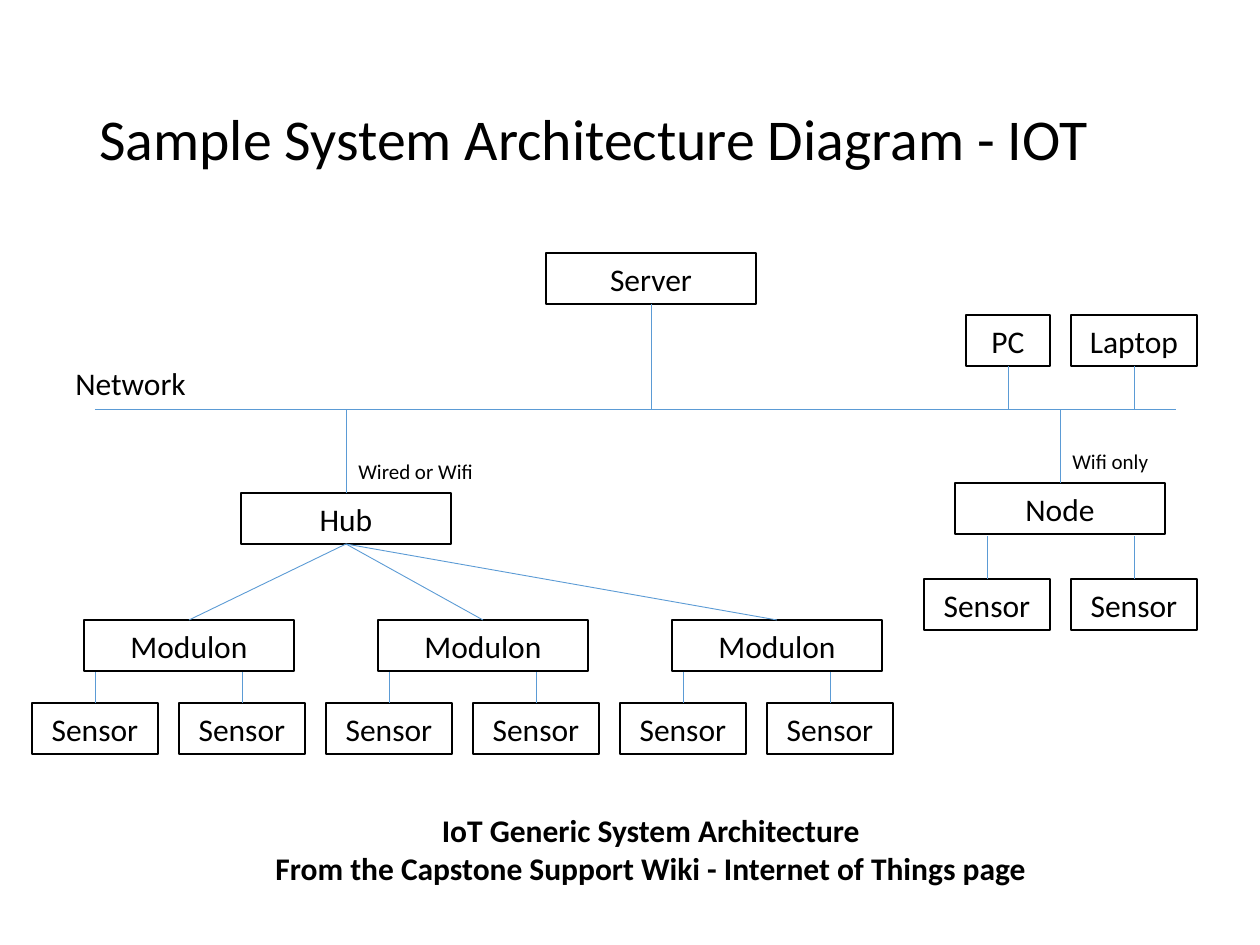
from dataclasses import dataclass

from pptx import Presentation
from pptx.dml.color import RGBColor
from pptx.enum.shapes import MSO_CONNECTOR as Connector, MSO_SHAPE as Preset
from pptx.enum.text import MSO_ANCHOR as Anchor, PP_ALIGN as Align
from pptx.oxml.ns import qn
from pptx.util import Emu, Pt
from lxml.etree import SubElement

EMU_PER_PX = 914400 / 126
BLACK, WHITE, BLUE = "000000", "FFFFFF", "5B9BD5"
NODE_HEIGHT = 51
DEVICE_WIDTH, SENSOR_WIDTH = 210, 126
SENSOR_STEP = 147
BOARD_STEP = 294
NETWORK_Y = 409
TOP, BOTTOM = 0, 2


@dataclass(frozen=True)
class Node:
    label: str
    x: int
    y: int
    width: int = DEVICE_WIDTH

    @property
    def middle(self) -> int:
        return self.x + self.width // 2

    @property
    def bottom(self) -> int:
        return self.y + NODE_HEIGHT


@dataclass(frozen=True)
class Caption:
    text: str
    x: int
    y: int
    width: int
    height: int
    size: int
    bold: bool = False
    align: Align = Align.LEFT
    wrap: bool = False
    spacing: float = 1.0


def px(length: int) -> Emu:
    return Emu(round(length * EMU_PER_PX))


def color(value: str) -> RGBColor:
    return RGBColor.from_string(value)


def write(frame, text: str, *, size: int = 18, bold: bool = False,
          align: Align = Align.LEFT, wrap: bool = True, spacing: float = 1.0) -> None:
    frame.word_wrap = wrap
    frame.vertical_anchor = Anchor.MIDDLE
    frame.text = text
    for paragraph in frame.paragraphs:
        paragraph.alignment = align
        paragraph.line_spacing = spacing
        for run in paragraph.runs:
            run.font.name = "Calibri"
            run.font.size = Pt(size)
            run.font.bold = bold
            run.font.color.rgb = color(BLACK)


def draw_node(slide, node: Node):
    box = slide.shapes.add_shape(
        Preset.RECTANGLE, px(node.x), px(node.y), px(node.width), px(NODE_HEIGHT))
    box.shadow.inherit = False
    box.fill.solid()
    box.fill.fore_color.rgb = color(WHITE)
    box.line.color.rgb = color(BLACK)
    box.line.width = Pt(1)
    write(box.text_frame, node.label, align=Align.CENTER)
    return box


def draw_caption(slide, caption: Caption) -> None:
    box = slide.shapes.add_textbox(
        px(caption.x), px(caption.y), px(caption.width), px(caption.height))
    write(box.text_frame, caption.text, size=caption.size, bold=caption.bold,
          align=caption.align, wrap=caption.wrap, spacing=caption.spacing)


def draw_link(slide, start: tuple[int, int], end: tuple[int, int]):
    link = slide.shapes.add_connector(
        Connector.STRAIGHT, px(start[0]), px(start[1]), px(end[0]), px(end[1]))
    link.line.color.rgb = color(BLUE)
    link.line.width = Pt(0.5)
    SubElement(link._element.spPr, qn("a:effectLst"))
    return link


def link_to_network(slide, node: Node, box) -> None:
    above = node.y < NETWORK_Y
    edge = node.bottom if above else node.y
    link = draw_link(slide, (node.middle, edge), (node.middle, NETWORK_Y))
    link.begin_connect(box, BOTTOM if above else TOP)


def draw_sensors(slide, left: int, top: int, stub_top: int) -> None:
    for index in range(2):
        sensor = Node("Sensor", left + index * SENSOR_STEP, top, SENSOR_WIDTH)
        box = draw_node(slide, sensor)
        link = draw_link(slide, (sensor.middle, top), (sensor.middle, stub_top))
        link.begin_connect(box, TOP)


def main() -> None:
    deck = Presentation()
    deck.slide_width, deck.slide_height = px(1260), px(945)
    slide = deck.slides.add_slide(deck.slide_layouts[6])

    captions = [
        Caption("Sample System Architecture Diagram - IOT", 87, 50, 1086, 183, 33,
                wrap=True, spacing=0.9),
        Caption("Network", 63, 357, 137, 51, 18),
        Caption("Wifi only", 1060, 442, 102, 38, 12),
        Caption("Wired or Wifi", 346, 452, 141, 38, 12),
        Caption("IoT Generic System Architecture\n"
                "From the Capstone Support Wiki - Internet of Things page",
                260, 804, 782, 90, 18, bold=True, align=Align.CENTER),
    ]
    for caption in captions:
        draw_caption(slide, caption)

    draw_link(slide, (95, NETWORK_Y), (1176, NETWORK_Y))

    gateway = Node("Hub", 241, 493)
    gateway_box = draw_node(slide, gateway)
    link_to_network(slide, gateway, gateway_box)

    networked = [
        Node("Server", 546, 253),
        Node("PC", 966, 315, 84),
        Node("Laptop", 1071, 315, SENSOR_WIDTH),
        Node("Node", 955, 483),
    ]
    for node in networked:
        link_to_network(slide, node, draw_node(slide, node))

    for index in range(3):
        board = Node("Modulon", 84 + index * BOARD_STEP, 620)
        board_box = draw_node(slide, board)
        link = draw_link(slide, (gateway.middle, gateway.bottom), (board.middle, board.y))
        link.begin_connect(gateway_box, BOTTOM)
        link.end_connect(board_box, TOP)
        draw_sensors(slide, board.x - 52, 703, 672)

    draw_sensors(slide, 924, 579, 536)

    deck.save("out.pptx")


if __name__ == "__main__":
    main()
